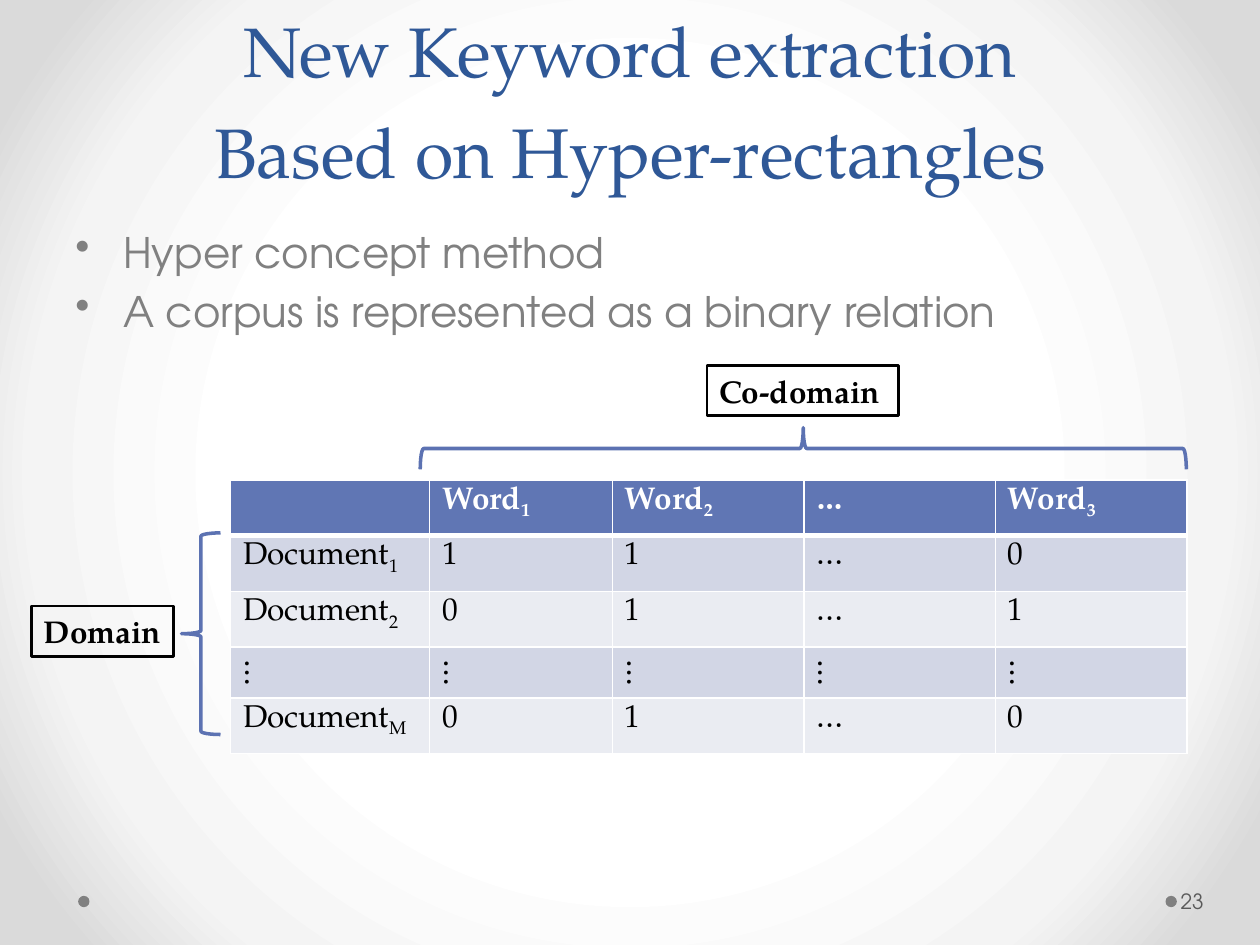
from lxml import etree
from pptx import Presentation
from pptx.dml.color import RGBColor
from pptx.enum.shapes import MSO_SHAPE
from pptx.enum.text import MSO_ANCHOR, MSO_AUTO_SIZE, PP_ALIGN
from pptx.oxml import parse_xml
from pptx.oxml.ns import qn
from pptx.util import Inches, Pt

OVAL, BRACE, RECTANGLE = MSO_SHAPE.OVAL, MSO_SHAPE.LEFT_BRACE, MSO_SHAPE.RECTANGLE
TOP, MIDDLE, BOTTOM = MSO_ANCHOR.TOP, MSO_ANCHOR.MIDDLE, MSO_ANCHOR.BOTTOM
CENTER, LEFT = PP_ALIGN.CENTER, PP_ALIGN.LEFT
FIT_SHAPE = MSO_AUTO_SIZE.SHAPE_TO_FIT_TEXT

BLACK = RGBColor(0x00, 0x00, 0x00)
WHITE = RGBColor(0xFF, 0xFF, 0xFF)
GRAY = RGBColor(0x80, 0x80, 0x80)
DARK_GRAY = RGBColor(0x59, 0x59, 0x59)
TITLE_BLUE = RGBColor(0x2F, 0x58, 0x97)
HEADER_BLUE = RGBColor(0x60, 0x76, 0xB4)
BRACE_BLUE = RGBColor(0x5C, 0x72, 0xB2)
BANDS = [RGBColor(0xD2, 0xD6, 0xE5), RGBColor(0xEA, 0xEC, 0xF2)]
SERIF, SANS = "TeX Gyre Pagella", "TeX Gyre Adventor"
DRAWING_NS = "http://schemas.openxmlformats.org/drawingml/2006/main"


def add_span(para, text, color, **formats):
    span = para.add_run()
    span.text = text
    span.font.color.rgb = color
    for name, value in formats.items():
        setattr(span.font, name, value)
    return span


def add_plain_shape(kind, left, top, width, height, fill=None, line=None, weight=1):
    shape = page.shapes.add_shape(
        kind, Inches(left), Inches(top), Inches(width), Inches(height))
    shape.shadow.inherit = False
    if fill is None:
        shape.fill.background()
    else:
        shape.fill.solid()
        shape.fill.fore_color.rgb = fill
    if line is None:
        shape.line.fill.background()
    else:
        shape.line.color.rgb = line
        shape.line.width = Pt(weight)
    return shape


deck = Presentation()
deck.slide_width, deck.slide_height = Inches(10), Inches(7.5)
page = deck.slides.add_slide(deck.slide_layouts[6])

# Radial background
stops = "".join(
    f'<a:gs pos="{percent * 1000}"><a:srgbClr val="{color}"/></a:gs>'
    for percent, color in [(50, "FFFFFF"), (76, "F4F4F4"), (92, "DADADA")])
page.element.cSld.insert(0, parse_xml(
    '<p:bg xmlns:p="http://schemas.openxmlformats.org/presentationml/2006/main" '
    f'xmlns:a="{DRAWING_NS}"><p:bgPr><a:gradFill><a:gsLst>{stops}</a:gsLst>'
    '<a:path path="circle"><a:fillToRect l="50000" t="50000" r="50000" b="50000"/></a:path>'
    '</a:gradFill><a:effectLst/></p:bgPr></p:bg>'))

# Footer dots
for left in (9.25, 0.62):
    add_plain_shape(OVAL, left, 7.11, 0.09, 0.09, fill=GRAY)

# Title
box = page.shapes.add_textbox(Inches(0.5), Inches(0), Inches(9), Inches(1.58))
box.text_frame.word_wrap = True
box.text_frame.vertical_anchor = BOTTOM
para = box.text_frame.paragraphs[0]
para.alignment = CENTER
para.line_spacing = Pt(58)
title_format = {"size": Pt(40), "name": SERIF}
add_span(para, "New Keyword extraction", TITLE_BLUE, **title_format)
para.add_line_break()
add_span(para, "Based on Hyper-rectangles", TITLE_BLUE, **title_format)

# Bullets
box = page.shapes.add_textbox(Inches(0.5), Inches(1.75), Inches(9), Inches(4.95))
frame = box.text_frame
frame.word_wrap = True
bullets = ["Hyper concept method", "A corpus is represented as a binary relation"]
for number, text in enumerate(bullets):
    para = frame.add_paragraph() if number else frame.paragraphs[0]
    para.space_before = Pt(4.8)
    properties = para._p.get_or_add_pPr()
    properties.set("marL", str(Inches(0.38)))
    properties.set("indent", str(Inches(-0.38)))
    etree.SubElement(properties, qn("a:buChar"), char="•")
    add_span(para, text, GRAY, size=Pt(24), name=SANS)

# Page number
box = page.shapes.add_textbox(Inches(9.34), Inches(6.95), Inches(0.61), Inches(0.4))
box.text_frame.word_wrap = True
box.text_frame.vertical_anchor = MIDDLE
box.text_frame.margin_left = Inches(0.03)
box.text_frame.margin_right = Inches(0.05)
add_span(box.text_frame.paragraphs[0], "23", DARK_GRAY, size=Pt(12), name=SANS)

# Binary relation table: a cell is its text, or a text and its subscript
rows = [
    ["", ("Word", "1"), ("Word", "2"), "…", ("Word", "3")],
    [("Document", "1"), "1", "1", "…", "0"],
    [("Document", "2"), "0", "1", "…", "1"],
    ["…"] * 5,
    [("Document", "M"), "0", "1", "…", "0"],
]
VERTICAL_ROW = 3
widths = [1.58, 1.45, 1.52, 1.52, 1.52]
table = page.shapes.add_table(
    len(rows), len(widths), Inches(1.83), Inches(3.81), Inches(7.58), Inches(2.03)).table
for column, width in zip(table.columns, widths):
    column.width = Inches(width)
for row_number, values in enumerate(rows):
    table.rows[row_number].height = Inches(0.405)
    header = row_number == 0
    for column_number, value in enumerate(values):
        cell = table.cell(row_number, column_number)
        cell.fill.solid()
        cell.fill.fore_color.rgb = HEADER_BLUE if header else BANDS[(row_number - 1) % 2]
        cell.vertical_anchor = TOP
        properties = cell._tc.get_or_add_tcPr()
        if row_number == VERTICAL_ROW:
            cell.vertical_anchor = BOTTOM
            properties.set("vert", "vert")
        for place, side in enumerate(["lnL", "lnR", "lnT", "lnB"]):
            weight = Pt(3) if header and side == "lnB" else Pt(1)
            properties.insert(place, parse_xml(
                f'<a:{side} xmlns:a="{DRAWING_NS}" w="{weight}"><a:solidFill>'
                f'<a:srgbClr val="{WHITE}"/></a:solidFill></a:{side}>'))
        para = cell.text_frame.paragraphs[0]
        pieces = value if isinstance(value, tuple) else (value,)
        for piece_number, piece in enumerate(pieces):
            if piece:
                span = add_span(para, piece, WHITE if header else BLACK,
                                size=Pt(18), name=SERIF, bold=header)
                if piece_number:
                    span.font._element.set("baseline", "-25000")

# Braces beside and above the table
add_plain_shape(BRACE, 1.44, 4.23, 0.31, 1.6, line=BRACE_BLUE, weight=2)
top_brace = add_plain_shape(BRACE, 6.21, 0.52, 0.33, 6.08, line=BRACE_BLUE, weight=2)
top_brace.rotation = 90

# Brace labels
for text, left, top, width in [("Domain", 0.25, 4.81, 1.13), ("Co-domain", 5.61, 2.9, 1.52)]:
    label = add_plain_shape(RECTANGLE, left, top, width, 0.4, line=BLACK, weight=1.5)
    frame = label.text_frame
    frame.word_wrap = False
    frame.auto_size = FIT_SHAPE
    frame.vertical_anchor = TOP
    para = frame.paragraphs[0]
    para.alignment = LEFT
    add_span(para, text, BLACK, size=Pt(18), name=SERIF, bold=True)

deck.save("out.pptx")
